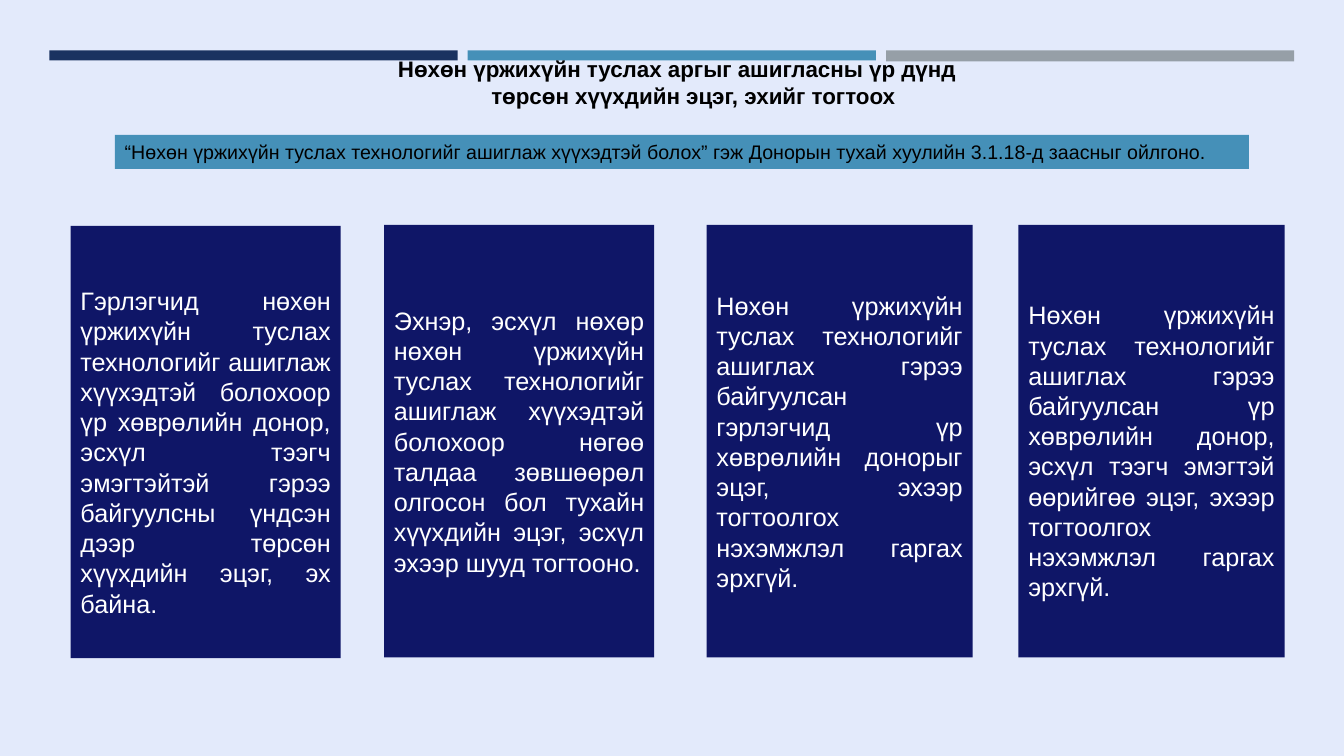
import dataclasses

import pptx
import pptx.dml.color
import pptx.enum.shapes
import pptx.enum.text
import pptx.shapes.autoshape
import pptx.slide
import pptx.util

Pt = pptx.util.Pt
Align = pptx.enum.text.PP_ALIGN
Anchor = pptx.enum.text.MSO_ANCHOR

NAVY, BLUE, WHITE, BLACK = "0F1667", "4590B8", "FFFFFF", "000000"
BAR_LEFT, BAR_TOP, BAR_WIDTH, BAR_STEP = 35.3, 36, 291.6, 298.8
CARD_HEIGHT = 308.9
BLANK_LAYOUT = 6


@dataclasses.dataclass
class Bar:
    color: str
    height: float


@dataclasses.dataclass
class Card:
    left: float
    top: float
    width: float
    inset_top: float
    text: str


BARS = [Bar("1A3260", 7.2), Bar(BLUE, 7.2), Bar("969FA7", 7.9)]

CARDS = [
    Card(50.4, 161.3, 193, 17.4,
         "Гэрлэгчид нөхөн үржихүйн туслах технологийг ашиглаж хүүхэдтэй "
         "болохоор үр хөврөлийн донор, эсхүл тээгч эмэгтэйтэй гэрээ "
         "байгуулсны үндсэн дээр төрсөн хүүхдийн эцэг, эх байна."),
    Card(274.3, 160.6, 193, 3.6,
         "Эхнэр, эсхүл нөхөр нөхөн үржихүйн туслах технологийг ашиглаж "
         "хүүхэдтэй болохоор нөгөө талдаа зөвшөөрөл олгосон бол тухайн "
         "хүүхдийн эцэг, эсхүл эхээр шууд тогтооно."),
    Card(504.7, 160.6, 190.1, 3.6,
         "Нөхөн үржихүйн туслах технологийг ашиглах гэрээ байгуулсан "
         "гэрлэгчид үр хөврөлийн донорыг эцэг, эхээр тогтоолгох "
         "нэхэмжлэл гаргах эрхгүй."),
    Card(727.5, 160.6, 190.1, 17.4,
         "Нөхөн үржихүйн туслах технологийг ашиглах гэрээ байгуулсан үр "
         "хөврөлийн донор, эсхүл тээгч эмэгтэй өөрийгөө эцэг, эхээр "
         "тогтоолгох нэхэмжлэл гаргах эрхгүй."),
]

TITLE = ("Нөхөн үржихүйн туслах аргыг ашигласны үр дүнд\n"
         "төрсөн хүүхдийн эцэг, эхийг тогтоох")
TITLE_SECOND_LINE_INDENT = 66.7
DEFINITION = ("“Нөхөн үржихүйн туслах технологийг ашиглаж хүүхэдтэй болох” "
              "гэж Донорын тухай хуулийн 3.1.18-д заасныг ойлгоно.")


def rgb(color: str) -> pptx.dml.color.RGBColor:
    return pptx.dml.color.RGBColor.from_string(color)


def add_rectangle(page: pptx.slide.Slide, left: float, top: float, width: float,
                  height: float, color: str) -> pptx.shapes.autoshape.Shape:
    box = page.shapes.add_shape(pptx.enum.shapes.MSO_SHAPE.RECTANGLE,
                                Pt(left), Pt(top), Pt(width), Pt(height))
    box.shadow.inherit = False
    box.fill.solid()
    box.fill.fore_color.rgb = rgb(color)
    box.line.fill.background()
    return box


def write(box: pptx.shapes.autoshape.Shape, text: str, size: float, color: str,
          align: Align, anchor: Anchor, bold: bool = False) -> None:
    frame = box.text_frame
    frame.text = text
    frame.word_wrap = True
    frame.vertical_anchor = anchor
    for paragraph in frame.paragraphs:
        paragraph.alignment = align
        for span in paragraph.runs:
            span.font.name = "Arial"
            span.font.size = Pt(size)
            span.font.bold = bold
            span.font.color.rgb = rgb(color)


def add_card(page: pptx.slide.Slide, card: Card) -> None:
    box = add_rectangle(page, card.left, card.top, card.width, CARD_HEIGHT, NAVY)
    write(box, card.text, 18, WHITE, Align.JUSTIFY, Anchor.MIDDLE)
    box.text_frame.margin_top = Pt(card.inset_top)


def add_title(page: pptx.slide.Slide) -> None:
    box = page.shapes.add_textbox(Pt(277.2), Pt(36), Pt(504), Pt(46))
    write(box, TITLE, 16, BLACK, Align.JUSTIFY, Anchor.TOP, bold=True)
    second_line = box.text_frame.paragraphs[1]
    second_line._p.get_or_add_pPr().set("marL", str(Pt(TITLE_SECOND_LINE_INDENT)))


def main() -> None:
    deck = pptx.Presentation()
    deck.slide_width, deck.slide_height = Pt(960), Pt(540)
    page = deck.slides.add_slide(deck.slide_layouts[BLANK_LAYOUT])
    page.background.fill.solid()
    page.background.fill.fore_color.rgb = rgb("E3EAFB")

    for index, bar in enumerate(BARS):
        add_rectangle(page, BAR_LEFT + index * BAR_STEP, BAR_TOP,
                      BAR_WIDTH, bar.height, bar.color)
    for card in CARDS:
        add_card(page, card)
    add_title(page)
    definition = add_rectangle(page, 82, 96.4, 810, 24.2, BLUE)
    write(definition, DEFINITION, 14, BLACK, Align.LEFT, Anchor.TOP)

    deck.save("out.pptx")


if __name__ == "__main__":
    main()
